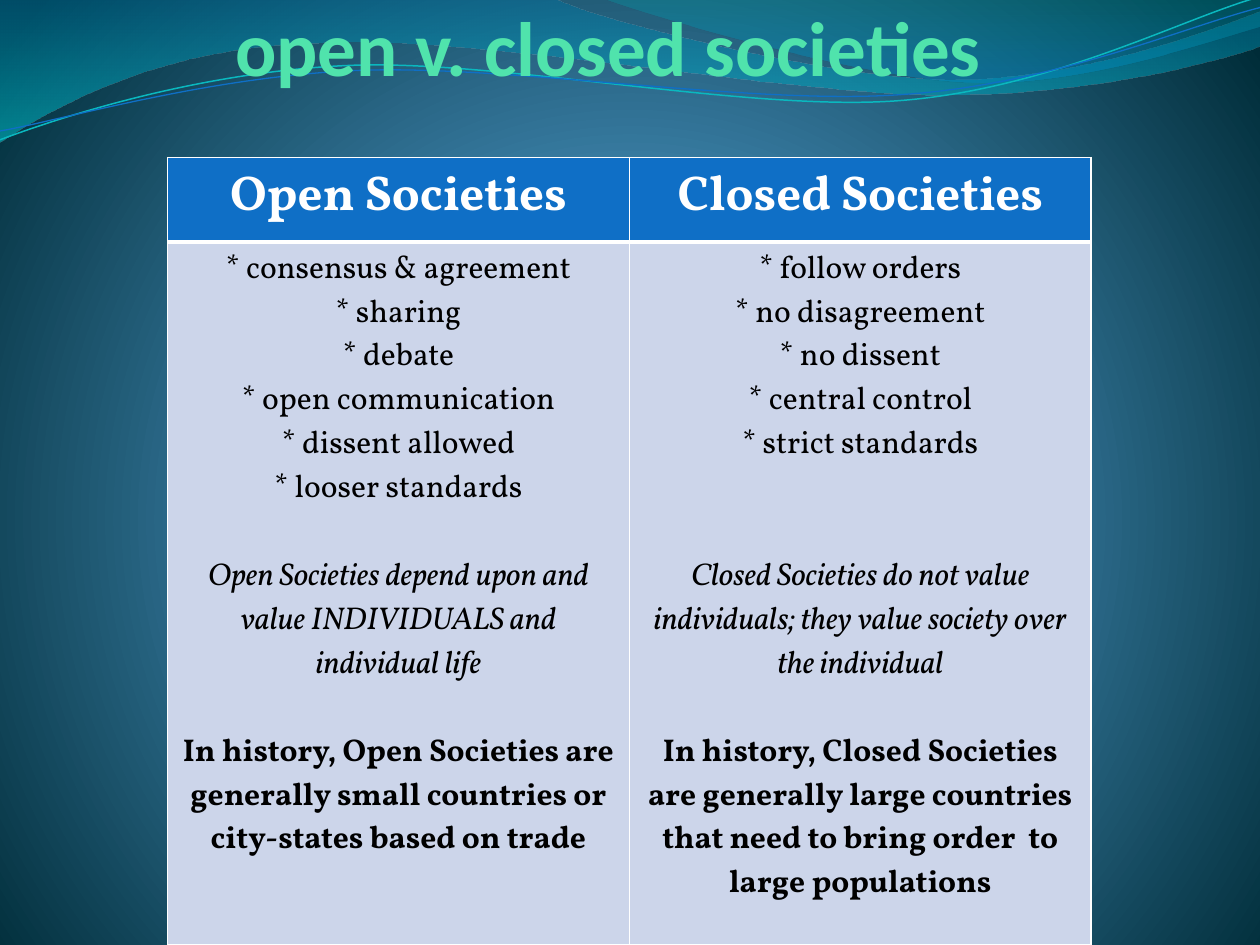
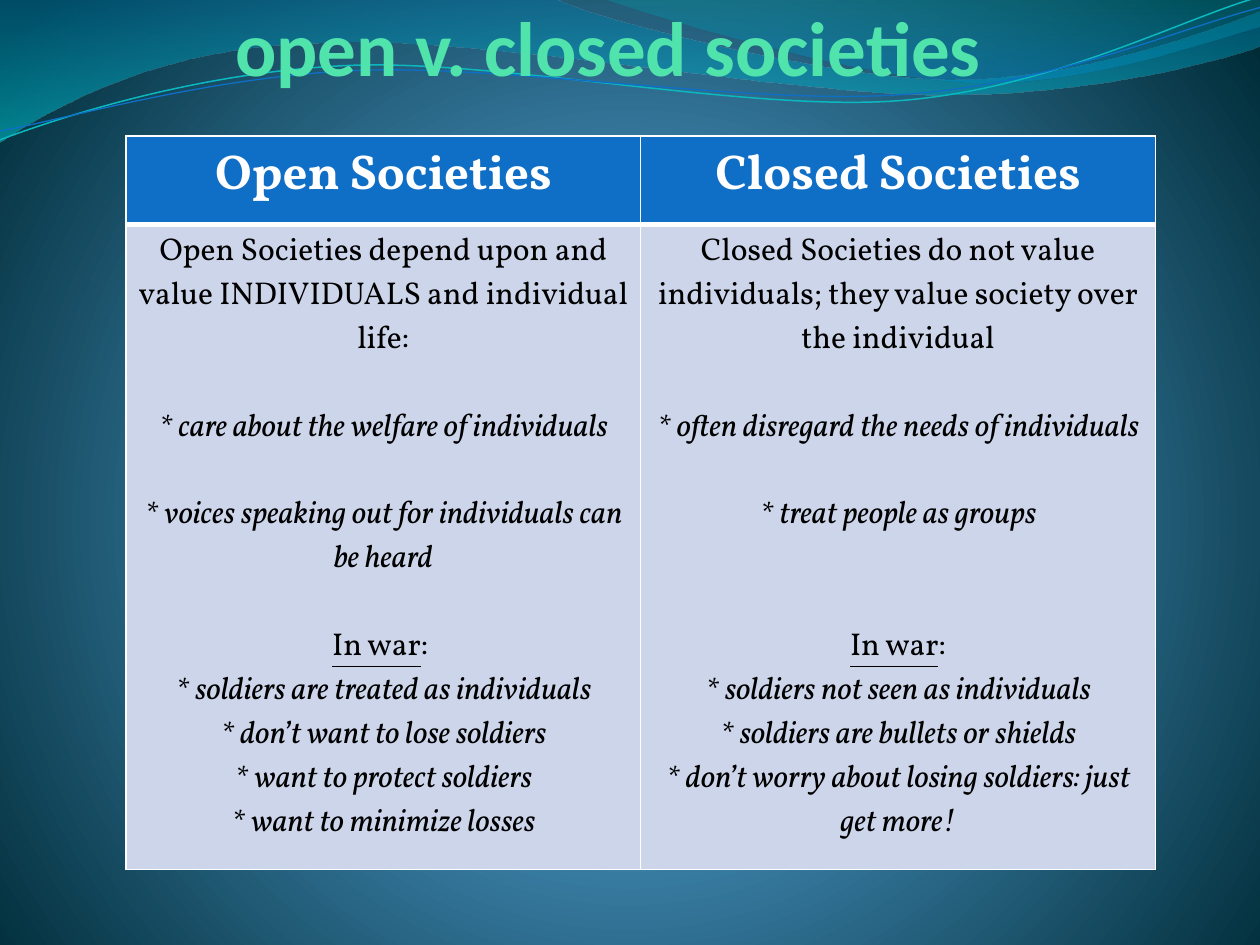
from lxml.etree import SubElement
from pptx import Presentation
from pptx.dml.color import RGBColor
from pptx.enum.text import MSO_ANCHOR as Anchor, PP_ALIGN as Align
from pptx.oxml.ns import qn
from pptx.util import Inches, Pt

WHITE = RGBColor(0xFF, 0xFF, 0xFF)
BLACK = RGBColor(0x00, 0x00, 0x00)
TITLE_GREEN = RGBColor(0x50, 0xE3, 0xAC)
HEADER_BLUE = RGBColor(0x0F, 0x6F, 0xC6)
CELL_BLUE = RGBColor(0xCC, 0xD5, 0xEA)
LINE_TEAL = RGBColor(0x0A, 0xB8, 0xBF)
SKY = RGBColor(0x4A, 0xA0, 0xD6)
SKY_MID = RGBColor(0x4C, 0x98, 0xC7)
DEEP_SEA = RGBColor(0x00, 0x2C, 0x38)
WAVE_BLUE = RGBColor(0x00, 0x74, 0xA1)
WAVE_CYAN = RGBColor(0x00, 0xC6, 0xCF)
CREST_TEAL = RGBColor(0x00, 0xA1, 0xA9)
CREST_BLUE = RGBColor(0x00, 0x8B, 0xBF)

TITLE_FONT, TABLE_FONT = "Calibri", "Vollkorn"
BLANK_LINE = 25.1  # points: one line of 18-point table text

# Gradient stops: position %, colour, opacity %
SEA_STOPS = [(0, SKY, 100), (25, SKY_MID, 100), (100, DEEP_SEA, 100)]

# An outline is a list of steps; two numbers are a corner, six a Bezier curve.
WAVE = [(0, 0), (4.4, -0.01), (4.76, 0.17, 6.64, 0.63, 7.58, 0.63),
        (8.53, 0.63, 9.58, 0.26, 10, 0.09), (10.01, 0.36),
        (9.83, 0.44, 8.7, 0.76, 7.46, 0.75),
        (6.22, 0.75, 3.82, 0.28, 2.57, 0.34),
        (1.29, 0.36, 0.46, 0.83, -0.01, 1.13), (0, 0)]
CREST = [(4.79, -0.01), (5.09, 0.11, 6.82, 0.62, 7.69, 0.65),
         (8.56, 0.69, 9.61, 0.32, 10, 0.21), (10, 0), (4.79, -0.01)]
TEAL_SWELL = [(0, 1.11), (0.48, 0.93, 1.58, 0.57, 2.77, 0.52),
              (3.95, 0.47, 5.93, 0.89, 7.13, 0.8),
              (8.33, 0.71, 9.38, 0.15, 9.98, -0.02)]
BLUE_SWELL = [(0, 1.04), (0.47, 0.96, 1.64, 0.61, 2.83, 0.56),
              (4.03, 0.51, 5.97, 0.84, 7.17, 0.75),
              (8.36, 0.67, 9.41, 0.21, 10, 0.06)]

TITLE = "open v. closed societies"
HEADERS = ["Open Societies", "Closed Societies"]


def bend_curves(shape, steps):
    """Join the three straight segments of each six-number step into a curve."""
    segments = iter(list(shape._element.iter(qn("a:lnTo"))))
    for step in steps:
        first = next(segments)
        if len(step) == 2:
            continue
        parent = first.getparent()
        curve = SubElement(parent, qn("a:cubicBezTo"))
        first.addprevious(curve)
        for segment in (first, next(segments), next(segments)):
            curve.append(segment[0])
            parent.remove(segment)


def set_gradient(gradient, stops, circle=False):
    """Refill a gradFill element; it runs downwards unless it is a circle."""
    for child in list(gradient):
        gradient.remove(child)
    stop_list = SubElement(gradient, qn("a:gsLst"))
    for position, color, opacity in stops:
        stop = SubElement(stop_list, qn("a:gs"), pos=str(position * 1000))
        tint = SubElement(stop, qn("a:srgbClr"), val=str(color))
        if opacity < 100:
            SubElement(tint, qn("a:alpha"), val=str(opacity * 1000))
    if circle:
        shade = SubElement(gradient, qn("a:path"), path="circle")
        SubElement(shade, qn("a:fillToRect"),
                   l="10000", t="110000", r="10000", b="100000")
    else:
        SubElement(gradient, qn("a:lin"), ang="5400000", scaled="1")


def set_borders(cell, top, bottom):
    """Give a cell white borders; side lines are one point wide."""
    widths = {"L": 1, "R": 1, "T": top, "B": bottom}
    properties = cell._tc.get_or_add_tcPr()
    for index, (side, width) in enumerate(widths.items()):
        line = SubElement(properties, qn(f"a:ln{side}"), w=str(Pt(width)))
        solid = SubElement(line, qn("a:solidFill"))
        SubElement(solid, qn("a:srgbClr"), val=str(WHITE))
        properties.insert(index, line)


def plain(text, blanks=0):
    return blanks, [(text, {})]


def italic(text, blanks=0):
    return blanks, [(text, {"italic": True})]


def bold(text, blanks=0):
    return blanks, [(text, {"bold": True})]


def in_war(blanks, colon):
    return blanks, [("In war", {"underline": True}), (colon, {})]


class SocietyDeck:
    def __init__(self):
        self.deck = Presentation()
        self.deck.slide_width, self.deck.slide_height = Inches(10), Inches(7.5)
        self.page = None

    def add_page(self):
        self.page = self.deck.slides.add_slide(self.deck.slide_layouts[6])
        self.page.background.fill.gradient()
        gradient = next(self.page._element.iter(qn("a:gradFill")))
        set_gradient(gradient, SEA_STOPS, circle=True)
        self.add_wave(WAVE, [(0, WAVE_BLUE, 45), (100, WAVE_CYAN, 55)])
        self.add_wave(CREST, [(0, CREST_TEAL, 30), (80, CREST_BLUE, 45)])
        self.add_swell(TEAL_SWELL, LINE_TEAL, 0.85)
        self.add_swell(BLUE_SWELL, HEADER_BLUE, 0.75)
        self.add_title()

    def add_outline(self, outline, close):
        start, *steps = [tuple(Inches(n) for n in step) for step in outline]
        points = [step[i:i + 2] for step in steps
                  for i in range(0, len(step), 2)]
        builder = self.page.shapes.build_freeform(*start)
        builder.add_line_segments(points, close=close)
        shape = builder.convert_to_shape()
        bend_curves(shape, steps)
        shape.shadow.inherit = False
        return shape

    def add_wave(self, outline, stops):
        wave = self.add_outline(outline, close=True)
        wave.line.fill.background()
        wave.fill.gradient()
        set_gradient(next(wave._element.iter(qn("a:gradFill"))), stops)

    def add_swell(self, outline, color, width):
        swell = self.add_outline(outline, close=False)
        swell.fill.background()
        swell.line.color.rgb = color
        swell.line.width = Pt(width)

    def add_title(self):
        box = self.page.shapes.add_textbox(
            Inches(0.58), Inches(0), Inches(8.5), Inches(1.49))
        frame = box.text_frame
        frame.word_wrap = True
        frame.vertical_anchor = Anchor.TOP
        frame.margin_left = frame.margin_right = 0
        frame.margin_top = frame.margin_bottom = 0
        para = frame.paragraphs[0]
        para.alignment = Align.CENTER
        self.add_span(para, TITLE, TITLE_FONT, 44, TITLE_GREEN, bold=True)

    def add_span(self, para, text, font, size, color,
                 bold=False, italic=False, underline=False):
        span = para.add_run()
        span.text = text
        span.font.name, span.font.size = font, Pt(size)
        span.font.color.rgb = color
        span.font.bold, span.font.italic = bold, italic
        span.font.underline = underline

    def fill_cell(self, cell, paragraphs, size, color, fill):
        cell.fill.solid()
        cell.fill.fore_color.rgb = fill
        frame = cell.text_frame
        for index, (blanks, spans) in enumerate(paragraphs):
            para = frame.add_paragraph() if index else frame.paragraphs[0]
            para.alignment = Align.CENTER
            if blanks:
                para.space_before = Pt(blanks * BLANK_LINE)
            for text, style in spans:
                self.add_span(para, text, TABLE_FONT, size, color, **style)

    def add_comparison(self, left, top, width, row_heights, columns):
        table = self.page.shapes.add_table(
            2, 2, Inches(left), Inches(top), Inches(width),
            Inches(sum(row_heights))).table
        for row, height in zip(table.rows, row_heights):
            row.height = Inches(height)
        for index, (header, paragraphs) in enumerate(zip(HEADERS, columns)):
            head, body = table.cell(0, index), table.cell(1, index)
            self.fill_cell(head, [bold(header)], 28, WHITE, HEADER_BLUE)
            self.fill_cell(body, paragraphs, 18, BLACK, CELL_BLUE)
            set_borders(head, top=1, bottom=3)
            set_borders(body, top=3, bottom=1)


def main():
    show = SocietyDeck()

    show.add_page()
    show.add_comparison(1.33, 1.25, 7.33, (0.67, 5.58), [
        [plain("* consensus & agreement"),
         plain("* sharing"),
         plain("* debate"),
         plain("* open communication"),
         plain("* dissent allowed"),
         plain("* looser standards"),
         italic("Open Societies depend upon and value INDIVIDUALS and "
                "individual life", blanks=1),
         bold("In history, Open Societies are generally small countries or "
              "city-states based on trade", blanks=1)],
        [plain("* follow orders"),
         plain("* no disagreement"),
         plain("* no dissent"),
         plain("* central control"),
         plain("* strict standards"),
         italic("Closed Societies do not value individuals; they value "
                "society over the individual", blanks=2),
         bold("In history, Closed Societies are generally large countries "
              "that need to bring order  to large populations", blanks=1)],
    ])

    show.add_page()
    show.add_comparison(1, 1.08, 8.17, (0.7, 5.12), [
        [plain("Open Societies depend upon and value INDIVIDUALS and "
               "individual life:"),
         italic("* care about the welfare of individuals", blanks=1),
         italic("* voices speaking out for individuals can be heard", blanks=1),
         in_war(blanks=1, colon=": "),
         italic("* soldiers are treated as individuals"),
         italic("* don’t want to lose soldiers"),
         italic("* want to protect soldiers"),
         italic("* want to minimize losses")],
        [plain("Closed Societies do not value individuals; they value "
               "society over the individual"),
         italic("* often disregard the needs of individuals", blanks=1),
         italic("* treat people as groups", blanks=1),
         in_war(blanks=2, colon=":"),
         italic("* soldiers not seen as individuals"),
         italic("* soldiers are bullets or shields"),
         italic("* don’t worry about losing soldiers: just get more!")],
    ])

    show.deck.save("out.pptx")


if __name__ == "__main__":
    main()
